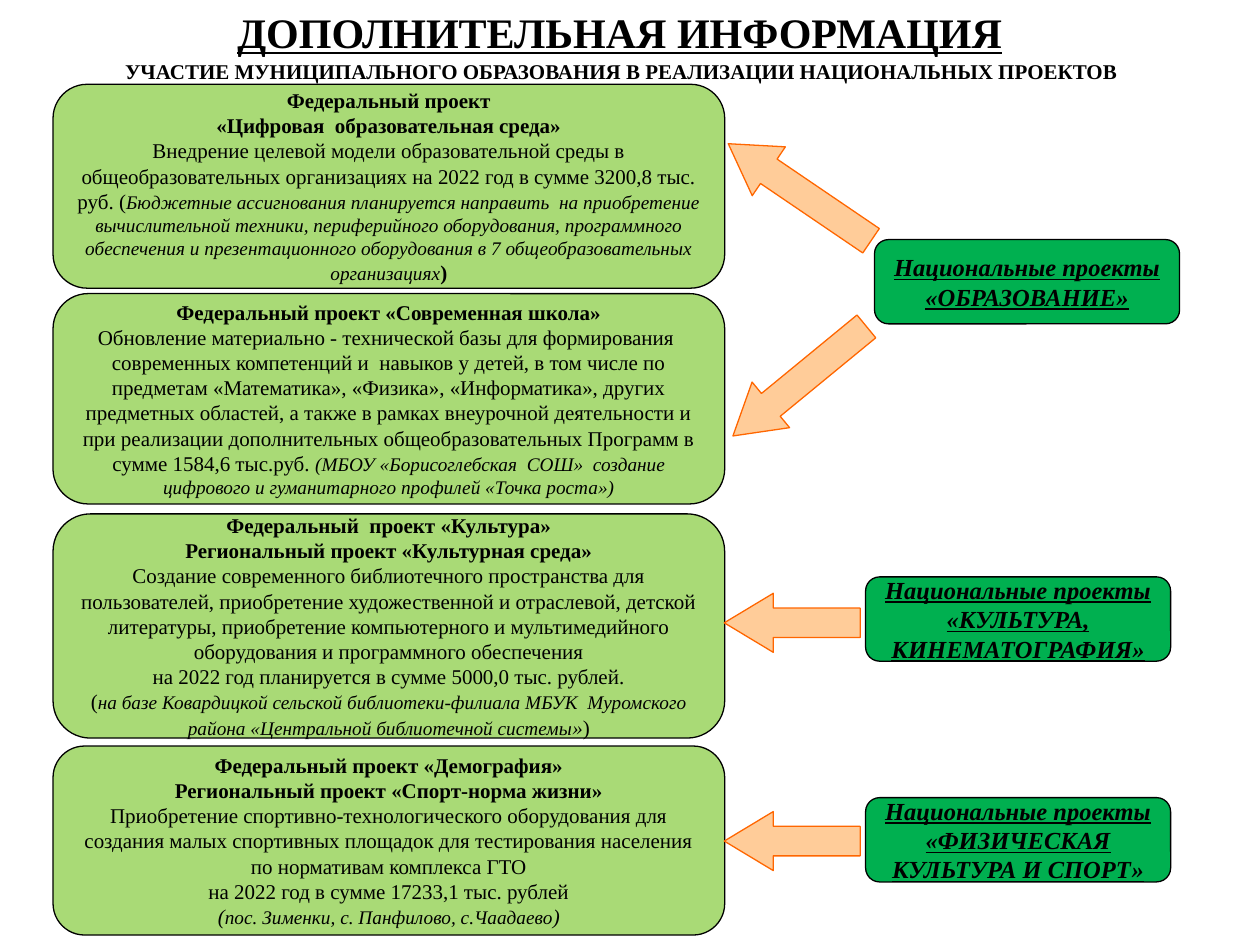
from dataclasses import dataclass

from lxml import etree
from pptx import Presentation
from pptx.dml.color import RGBColor
from pptx.enum.shapes import MSO_SHAPE
from pptx.enum.text import MSO_ANCHOR, MSO_AUTO_SIZE, PP_ALIGN
from pptx.oxml.ns import qn
from pptx.util import Cm, Pt

BOX = MSO_SHAPE.FLOWCHART_ALTERNATE_PROCESS
ARROW = MSO_SHAPE.RIGHT_ARROW
TOP, MIDDLE = MSO_ANCHOR.TOP, MSO_ANCHOR.MIDDLE
CENTER = PP_ALIGN.CENTER
NO_FIT = MSO_AUTO_SIZE.NONE

FONT = "Times New Roman"
COLORS = {
    "text": "000000",
    "card": "92D050",
    "goal": "00B050",
    "arrow": "FFCC99",
    "edge": "FF6600",
}


@dataclass
class Run:
    text: str
    size: float = 12
    bold: bool = False
    italic: bool = False
    under: bool = False


@dataclass
class Card:
    top: float
    height: float
    lines: list[list[Run]]


@dataclass
class Goal:
    left: float
    top: float
    name: str


@dataclass
class Arrow:
    left: float
    top: float
    width: float
    angle: float


def head(text: str) -> list[Run]:
    return [Run(text, bold=True)]


def note(text: str) -> Run:
    return Run(text, 11, italic=True)


CARDS = [
    Card(1.7, 4.11, [
        head("Федеральный проект"),
        head("«Цифровая  образовательная среда»"),
        [Run("Внедрение целевой модели образовательной среды в общеобразовательных "
             "организациях на 2022 год в сумме 3200,8 тыс. руб. ("),
         note("Бюджетные ассигнования планируется направить  на приобретение "
              "вычислительной техники, периферийного оборудования, программного "
              "обеспечения и презентационного оборудования в 7 "
              "общеобразовательных организациях"),
         Run(")", bold=True)],
    ]),
    Card(5.92, 4.24, [
        head("Федеральный проект «Современная школа»"),
        [Run("Обновление материально - технической базы для формирования  "
             "современных компетенций и  навыков у детей, в том числе по предметам "
             "«Математика», «Физика», «Информатика», других предметных областей, а "
             "также в рамках внеурочной деятельности и при реализации дополнительных "
             "общеобразовательных Программ в сумме 1584,6 тыс.руб. "),
         note("(МБОУ «Борисоглебская  СОШ»  создание цифрового и гуманитарного "
              "профилей «Точка роста»)")],
    ]),
    Card(10.36, 4.52, [
        head("Федеральный  проект «Культура»"),
        head("Региональный проект «Культурная среда»"),
        [Run("Создание современного библиотечного пространства для пользователей, "
             "приобретение художественной и отраслевой, детской литературы, "
             "приобретение компьютерного и мультимедийного оборудования и "
             "программного обеспечения")],
        [Run("на 2022 год планируется в сумме 5000,0 тыс. рублей.")],
        [Run("("),
         note("на базе Ковардицкой сельской библиотеки-филиала МБУК  Муромского "
              "района «Центральной библиотечной системы"),
         Run("»", italic=True), Run(")")],
    ]),
    Card(15.04, 3.81, [
        head("Федеральный проект «Демография»"),
        head("Региональный проект «Спорт-норма жизни»"),
        [Run("Приобретение спортивно-технологического оборудования для создания "
             "малых спортивных площадок для тестирования населения по нормативам "
             "комплекса ГТО")],
        [Run("на 2022 год в сумме 17233,1 тыс. рублей")],
        [Run("(", italic=True), note("пос. Зименки, с. Панфилово, с.Чаадаево"),
         Run(")", italic=True)],
    ]),
]
GOALS = [
    Goal(17.63, 4.83, "«ОБРАЗОВАНИЕ»"),
    Goal(17.45, 11.63, "«КУЛЬТУРА, КИНЕМАТОГРАФИЯ»"),
    Goal(17.45, 16.08, "«ФИЗИЧЕСКАЯ КУЛЬТУРА И СПОРТ»"),
]
ARROWS = [
    Arrow(14.38, 3.28, 3.48, 214.2),
    Arrow(14.38, 7.09, 3.48, 140.6),
    Arrow(14.6, 11.96, 2.74, 180),
    Arrow(14.6, 16.36, 2.74, 180),
]


def color(name: str) -> RGBColor:
    return RGBColor.from_string(COLORS[name])


def write(shape, lines: list[list[Run]], anchor=MIDDLE) -> None:
    frame = shape.text_frame
    frame.word_wrap = True
    frame.auto_size = NO_FIT
    frame.vertical_anchor = anchor
    frame.text = "\n".join("" for _ in lines)
    for par, runs in zip(frame.paragraphs, lines):
        par.alignment = CENTER
        for item in runs:
            run = par.add_run()
            run.text = item.text
            font = run.font
            font.name, font.size = FONT, Pt(item.size)
            font.bold, font.italic = item.bold, item.italic
            font.underline = item.under
            font.color.rgb = color("text")


def draw(slide, kind, left: float, top: float, width: float, height: float,
         fill: str, line: str = "text"):
    shape = slide.shapes.add_shape(kind, Cm(left), Cm(top), Cm(width), Cm(height))
    shape.shadow.inherit = False
    shape.fill.solid()
    shape.fill.fore_color.rgb = color(fill)
    shape.line.color.rgb = color(line)
    shape.line.width = Pt(0.75)
    return shape


def fade(shape, share: int) -> None:
    """Set the fill opacity in percent."""
    tone = shape.fill._xPr.find(qn("a:solidFill"))[0]
    etree.SubElement(tone, qn("a:alpha")).set("val", str(share * 1000))


def add_card(slide, card: Card) -> None:
    shape = draw(slide, BOX, 1.07, card.top, 13.54, card.height, "card")
    fade(shape, 78)
    write(shape, card.lines)


def add_goal(slide, goal: Goal) -> None:
    shape = draw(slide, BOX, goal.left, goal.top, 6.15, 1.7, "goal")
    write(shape, [[Run(text, 14, True, True, True)]
                  for text in ("Национальные проекты", goal.name)])


def add_arrow(slide, arrow: Arrow) -> None:
    shape = draw(slide, ARROW, arrow.left, arrow.top, arrow.width, 1.19,
                 "arrow", "edge")
    shape.adjustments[1] = 0.83
    shape.rotation = arrow.angle


def main() -> None:
    deck = Presentation()
    deck.slide_width, deck.slide_height = Cm(25.4), Cm(19.05)
    slide = deck.slides.add_slide(deck.slide_layouts[5])
    title = slide.shapes.title
    title.left, title.top = Cm(1.7), Cm(0)
    title.width, title.height = Cm(21.59), Cm(1.27)
    write(title, [[Run("ДОПОЛНИТЕЛЬНАЯ ИНФОРМАЦИЯ", 24, True, under=True)]], TOP)
    topic = slide.shapes.add_textbox(Cm(0.89), Cm(0.95), Cm(23.28), Cm(0.95))
    write(topic, [head("УЧАСТИЕ МУНИЦИПАЛЬНОГО ОБРАЗОВАНИЯ В РЕАЛИЗАЦИИ "
                       "НАЦИОНАЛЬНЫХ ПРОЕКТОВ")])
    for card in CARDS:
        add_card(slide, card)
    for goal in GOALS:
        add_goal(slide, goal)
    for arrow in ARROWS:
        add_arrow(slide, arrow)
    deck.save("out.pptx")


if __name__ == "__main__":
    main()
